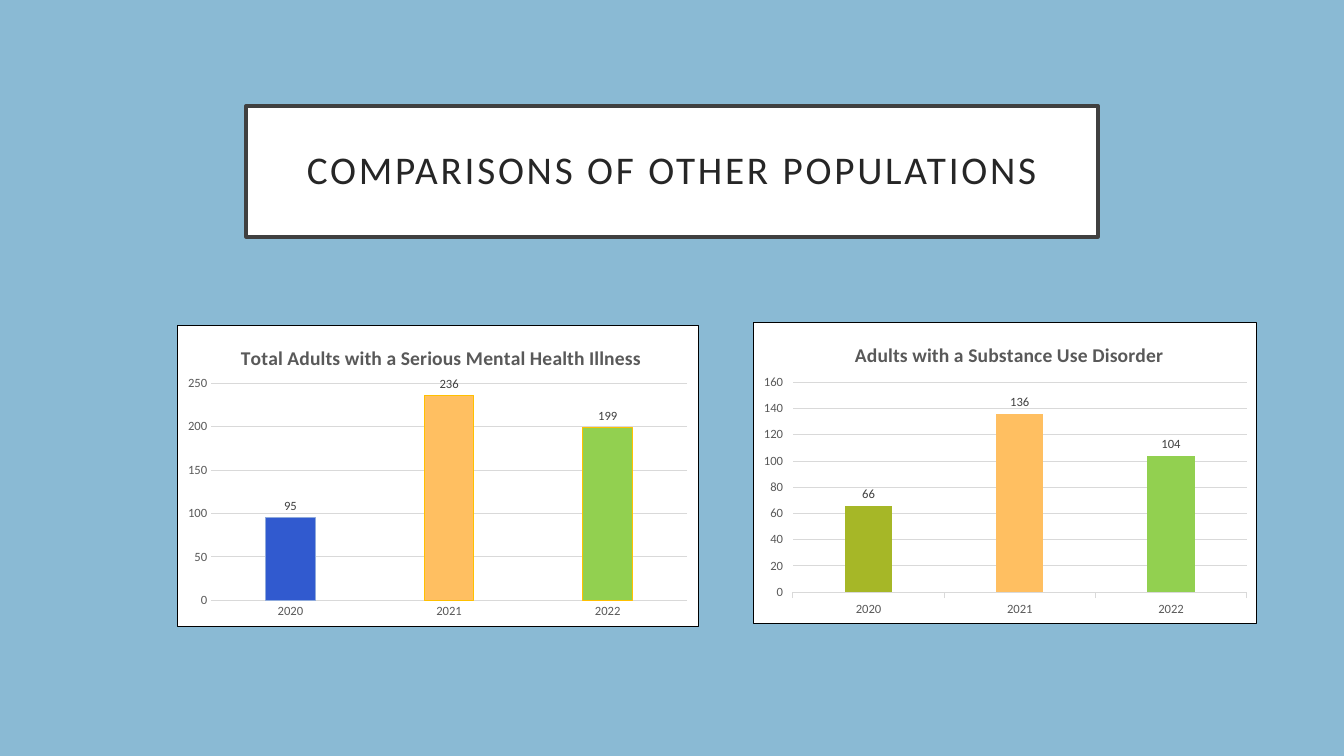
from dataclasses import dataclass

from pptx import Presentation
from pptx import util as u
from pptx.chart.data import CategoryChartData
from pptx.dml.color import RGBColor
from pptx.enum import chart as ch, text
from pptx.oxml import parse_xml
from pptx.oxml.ns import nsdecls, qn

PX = 9144  # EMU per px, 100 px to the inch
FONT = "Calibri"
YEARS = ("2020", "2021", "2022")


@dataclass
class Box:
    x: int
    y: int
    w: int
    h: int

    def emu(self) -> list[int]:
        return [u.Emu(v * PX) for v in (self.x, self.y, self.w, self.h)]


@dataclass
class BarChart:
    title: str
    title_x: int
    box: Box
    plot: Box  # relative to the chart
    values: tuple
    fills: tuple
    lines: tuple
    top: int
    step: int
    tick: ch.XL_TICK_MARK


TITLE = Box(244, 105, 845, 130)
TITLE_Y = 16
CHARTS = [
    BarChart("Total Adults with a Serious Mental Health Illness", 59,
             Box(176, 322, 517, 300), Box(33, 58, 473, 216), (95, 236, 199),
             ("315ACF", "FFBF61", "92D050"), ("8FAADC", "FFC000", "FFC000"),
             250, 50, ch.XL_TICK_MARK.NONE),
    BarChart("Adults with a Substance Use Disorder", 97,
             Box(747, 319, 500, 300), Box(39, 60, 451, 209), (66, 136, 104),
             ("A6B727", "FFBF61", "92D050"), (),
             160, 20, ch.XL_TICK_MARK.OUTSIDE),
]


def rgb(value: str) -> RGBColor:
    return RGBColor.from_string(value)


def set_fill(fill, color: str) -> None:
    fill.solid()
    fill.fore_color.rgb = rgb(color)


def set_line(line, color: str, width: float = 0.75) -> None:
    set_fill(line.fill, color)
    line.width = u.Pt(width)


def set_font(font, size: int, color: str, bold: bool = False) -> None:
    font.name, font.size, font.bold = FONT, u.Pt(size), bold
    font.color.rgb = rgb(color)


def set_layout(element, index: int, **parts: float) -> None:
    """Place a chart part by fractions of the chart's size."""
    for old in element.findall(qn("c:layout")):
        element.remove(old)
    target = '<c:layoutTarget val="inner"/>' if "w" in parts else ""
    modes = "".join(f'<c:{k}Mode val="edge"/>' for k in "xy")
    values = "".join(f'<c:{k} val="{v:.4f}"/>' for k, v in parts.items())
    element.insert(index, parse_xml(
        f'<c:layout {nsdecls("c")}><c:manualLayout>{target}{modes}{values}'
        '</c:manualLayout></c:layout>'))


def add_title(slide) -> None:
    sp = slide.shapes.title
    sp.left, sp.top, sp.width, sp.height = TITLE.emu()
    sp.shadow.inherit = False
    set_fill(sp.fill, "FFFFFF")
    set_line(sp.line, "404040", 2.5)
    tf = sp.text_frame
    tf.word_wrap = True
    tf.auto_size = text.MSO_AUTO_SIZE.NONE
    tf.vertical_anchor = text.MSO_ANCHOR.MIDDLE
    tf.margin_left = tf.margin_right = u.Inches(0.2)
    tf.margin_top = tf.margin_bottom = u.Inches(0.2)
    p = tf.paragraphs[0]
    p.alignment = text.PP_ALIGN.CENTER
    p.line_spacing = 0.9
    r = p.add_run()
    r.text = "COMPARISONS OF OTHER POPULATIONS"
    set_font(r.font, 28, "262626")
    r.font._element.set("spc", "200")


def add_bar_chart(slide, item: BarChart) -> None:
    data = CategoryChartData()
    data.categories = YEARS
    data.add_series("Series 1", item.values)
    chart = slide.shapes.add_chart(
        ch.XL_CHART_TYPE.COLUMN_CLUSTERED, *item.box.emu(), data).chart
    chart.has_legend = False
    set_font(chart.font, 10, "000000")

    # Background and border
    space = chart.element
    space.find(qn("c:chart")).addnext(parse_xml(
        f'<c:spPr {nsdecls("c", "a")}>'
        '<a:solidFill><a:srgbClr val="FFFFFF"/></a:solidFill>'
        '<a:ln w="9525"><a:solidFill><a:srgbClr val="000000"/></a:solidFill></a:ln>'
        '</c:spPr>'))

    # Chart title and plot area
    box, plot = item.box, item.plot
    chart.has_title = True
    p = chart.chart_title.text_frame.paragraphs[0]
    p.text = item.title
    set_font(p.font, 14, "595959", bold=True)
    set_layout(space.find(".//" + qn("c:title")), 1,
               x=item.title_x / box.w, y=TITLE_Y / box.h)
    set_layout(space.find(".//" + qn("c:plotArea")), 0,
               x=plot.x / box.w, y=plot.y / box.h,
               w=plot.w / box.w, h=plot.h / box.h)

    # Axes
    cat, val = chart.category_axis, chart.value_axis
    for axis in (cat, val):
        axis.major_tick_mark = item.tick
        axis.minor_tick_mark = ch.XL_TICK_MARK.NONE
        set_font(axis.tick_labels.font, 9, "595959")
    set_line(cat.format.line, "D9D9D9")
    val.format.line.fill.background()
    val.minimum_scale, val.maximum_scale = 0, item.top
    val.major_unit = item.step
    val.has_major_gridlines = True
    set_line(val.major_gridlines.format.line, "D9D9D9")

    # Bars and value labels
    bars = chart.plots[0]
    bars.gap_width, bars.overlap = 219, -27
    bars.vary_by_categories = False
    series = bars.series[0]
    series.invert_if_negative = False
    set_fill(series.format.fill, item.fills[0])
    for i, color in enumerate(item.fills):
        set_fill(series.points[i].format.fill, color)
    for i, color in enumerate(item.lines):
        set_line(series.points[i].format.line, color)
    labels = series.data_labels
    labels.show_value = True
    labels.position = ch.XL_LABEL_POSITION.OUTSIDE_END
    set_font(labels.font, 9, "404040")


def main() -> None:
    prs = Presentation()
    prs.slide_width, prs.slide_height = u.Emu(1333 * PX), u.Emu(750 * PX)
    slide = prs.slides.add_slide(prs.slide_layouts[5])
    set_fill(slide.background.fill, "8ABAD4")
    add_title(slide)
    for item in CHARTS:
        add_bar_chart(slide, item)
    prs.save("out.pptx")


if __name__ == "__main__":
    main()
